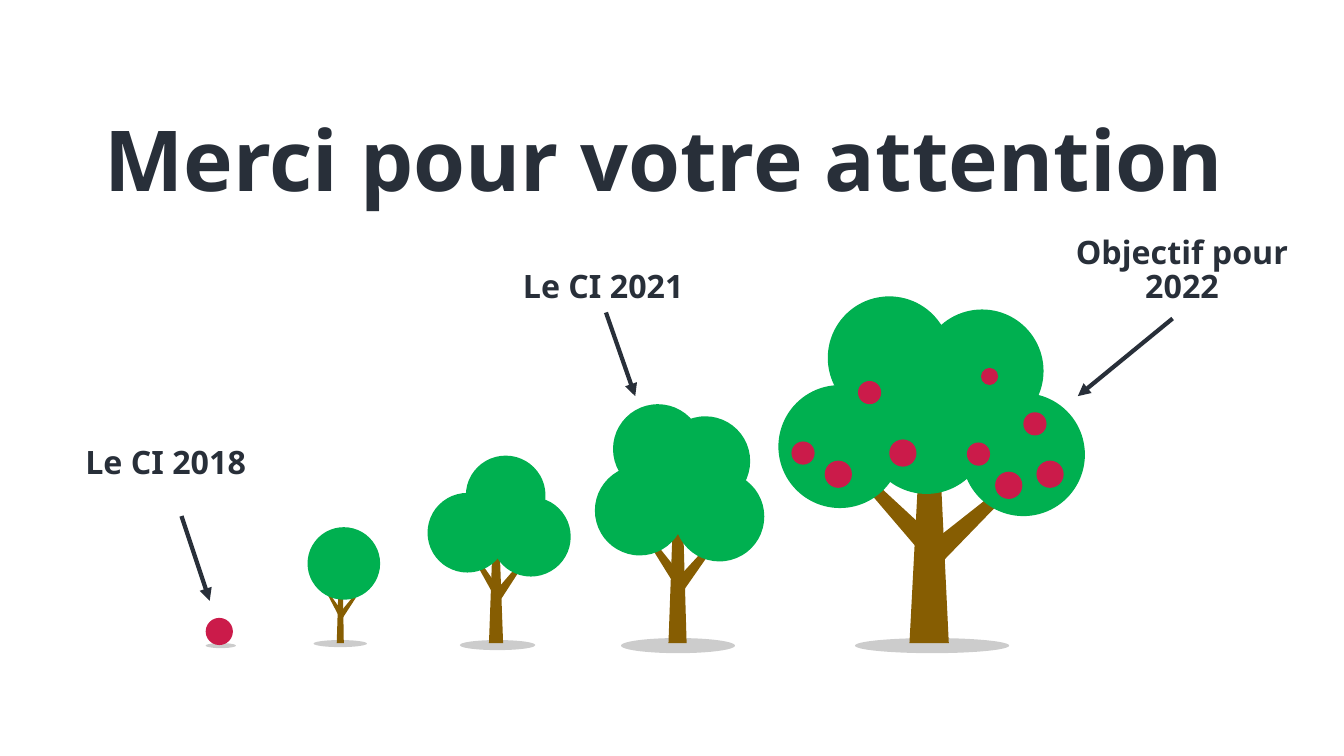
from pptx import Presentation
from pptx.dml.color import RGBColor
from pptx.enum.text import MSO_ANCHOR, MSO_AUTO_SIZE, PP_ALIGN
from pptx.oxml import parse_xml
from pptx.oxml.ns import nsdecls
from pptx.util import Inches, Pt
from lxml.etree import SubElement
from pptx.oxml.ns import qn

INK, WOOD, LEAF, FRUIT, BLACK = "282F39", "865D02", "00B050", "CB1B4A", "000000"
FONT = "Noto Sans"
GROUND = 6.38

TITLE = ("Merci pour votre attention", (0.89, 1.01, 11.38, 1.11))
# text, box, arrow start, arrow end
LABELS = [
    ("Le CI 2018", (0.71, 4.36, 1.87, 0.49), (1.8, 5.12), (2.08, 5.96)),
    ("Le CI 2021", (5.05, 2.62, 1.87, 0.49), (6.01, 3.1), (6.3, 3.93)),
    ("Objectif pour 2022", (10.31, 2.25, 2.83, 0.88), (11.63, 3.16), (10.69, 3.93)),
]
# shade: box; trunk: foot left, foot right, top left, top right, top y
# boughs: corner points; crown: leaf size and corners; fruit: x, y, size
STAGES = [
    dict(shade=(2.04, 6.38, 0.3, 0.05), fruit=[(2.04, 6.13, 0.27)]),
    dict(shade=(3.11, 6.35, 0.53, 0.07),
         trunk=(3.34, 3.41, 3.36, 3.4, 5.74),
         boughs=[[(3.36, 6.11), (3.25, 5.9), (3.26, 5.88), (3.39, 6.06)],
                 [(3.37, 6.08), (3.51, 5.91), (3.53, 5.93), (3.4, 6.13)]],
         crown=(0.72, [(3.05, 5.23)])),
    dict(shade=(4.56, 6.35, 0.75, 0.1),
         trunk=(4.85, 4.99, 4.89, 4.95, 5.28),
         boughs=[[(4.9, 5.91), (4.7, 5.55), (4.72, 5.51), (4.95, 5.84)],
                 [(4.91, 5.87), (5.16, 5.58), (5.18, 5.62), (4.96, 5.96)]],
         crown=(0.79, [(4.24, 4.89), (4.62, 4.52), (4.87, 4.93)])),
    dict(shade=(6.16, 6.33, 1.13, 0.15),
         trunk=(6.63, 6.81, 6.68, 6.77, 5.01),
         boughs=[[(6.69, 5.8), (6.41, 5.35), (6.44, 5.31), (6.76, 5.71)],
                 [(6.71, 5.75), (7.05, 5.38), (7.08, 5.43), (6.78, 5.86)]],
         crown=(0.89, [(5.9, 4.62), (6.08, 4.01), (6.55, 4.13), (6.69, 4.68)])),
    dict(shade=(8.48, 6.33, 1.53, 0.15),
         trunk=(9.02, 9.41, 9.13, 9.31, 4.29),
         boughs=[[(9.15, 5.5), (8.56, 4.81), (8.63, 4.74), (9.3, 5.36)],
                 [(9.19, 5.42), (9.9, 4.86), (9.97, 4.93), (9.34, 5.58)]],
         crown=(1.22, [(7.72, 3.82), (8.21, 2.94), (9.13, 3.07), (9.54, 3.9),
                       (8.58, 3.68)]),
         fruit=[(8.18, 4.57, 0.27), (8.51, 3.78, 0.23), (9.87, 4.68, 0.27),
                (10.28, 4.57, 0.27), (8.82, 4.36, 0.27), (9.73, 3.65, 0.17),
                (9.59, 4.39, 0.23), (7.85, 4.38, 0.23), (10.15, 4.09, 0.23)]),
]


def rgb(code):
    return RGBColor.from_string(code)


def inch(nums):
    return [Inches(n) for n in nums]


def paint(shape, code):
    shape.shadow.inherit = False
    shape.fill.solid()
    shape.fill.fore_color.rgb = rgb(code)
    shape.line.fill.background()
    return shape


def oval(shapes, box, code):
    return paint(shapes.add_shape(9, *inch(box)), code)


def outline(shapes, points, code):
    first, *rest = [inch(p) for p in points]
    pen = shapes.build_freeform(*first)
    pen.add_line_segments(rest, close=True)
    paint(pen.convert_to_shape(), code)


def grow(slide, shade, trunk=None, boughs=(), crown=(0, ()), fruit=()):
    """Draw one stage of the tree as a group."""
    shapes = slide.shapes.add_group_shape().shapes
    shadow = oval(shapes, shade, BLACK)
    tint = shadow.fill._xPr.find(qn("a:solidFill"))[0]
    SubElement(tint, qn("a:alpha"), val="20000")
    if trunk:
        left, right, tip, end, top = trunk
        outline(shapes, [(left, GROUND), (tip, top), (end, top), (right, GROUND)], WOOD)
    for bough in boughs:
        outline(shapes, bough, WOOD)
    size, leaves = crown
    for x, y in leaves:
        oval(shapes, (x, y, size, size), LEAF)
    for x, y, d in fruit:
        oval(shapes, (x, y, d, d), FRUIT)


def write(shape, text, size, spacing=1.0):
    frame = shape.text_frame
    frame.text = text
    frame.word_wrap = True
    frame.auto_size = MSO_AUTO_SIZE.NONE
    frame.vertical_anchor = MSO_ANCHOR.MIDDLE
    para = frame.paragraphs[0]
    para.alignment = PP_ALIGN.CENTER
    para.line_spacing = spacing
    font = para.font
    font.name, font.size, font.bold = FONT, Pt(size), True
    font.color.rgb = rgb(INK)


def arrow(slide, start, end):
    line = slide.shapes.add_connector(1, *inch(start + end))
    line.line.color.rgb = rgb(INK)
    line.line.width = Pt(3)
    line.line._get_or_add_ln().append(
        parse_xml(f'<a:tailEnd {nsdecls("a")} type="triangle"/>'))
    SubElement(line._element.spPr, qn("a:effectLst"))


def main():
    deck = Presentation()
    deck.slide_width, deck.slide_height = inch((13.33, 7.5))
    slide = deck.slides.add_slide(deck.slide_layouts[5])

    text, box = TITLE
    title = slide.shapes.title
    title.left, title.top, title.width, title.height = inch(box)
    write(title, text, 60)

    for stage in STAGES:
        grow(slide, **stage)
    for text, box, start, end in LABELS:
        write(slide.shapes.add_textbox(*inch(box)), text, 23, 0.87)
        arrow(slide, start, end)
    deck.save("out.pptx")


if __name__ == "__main__":
    main()
